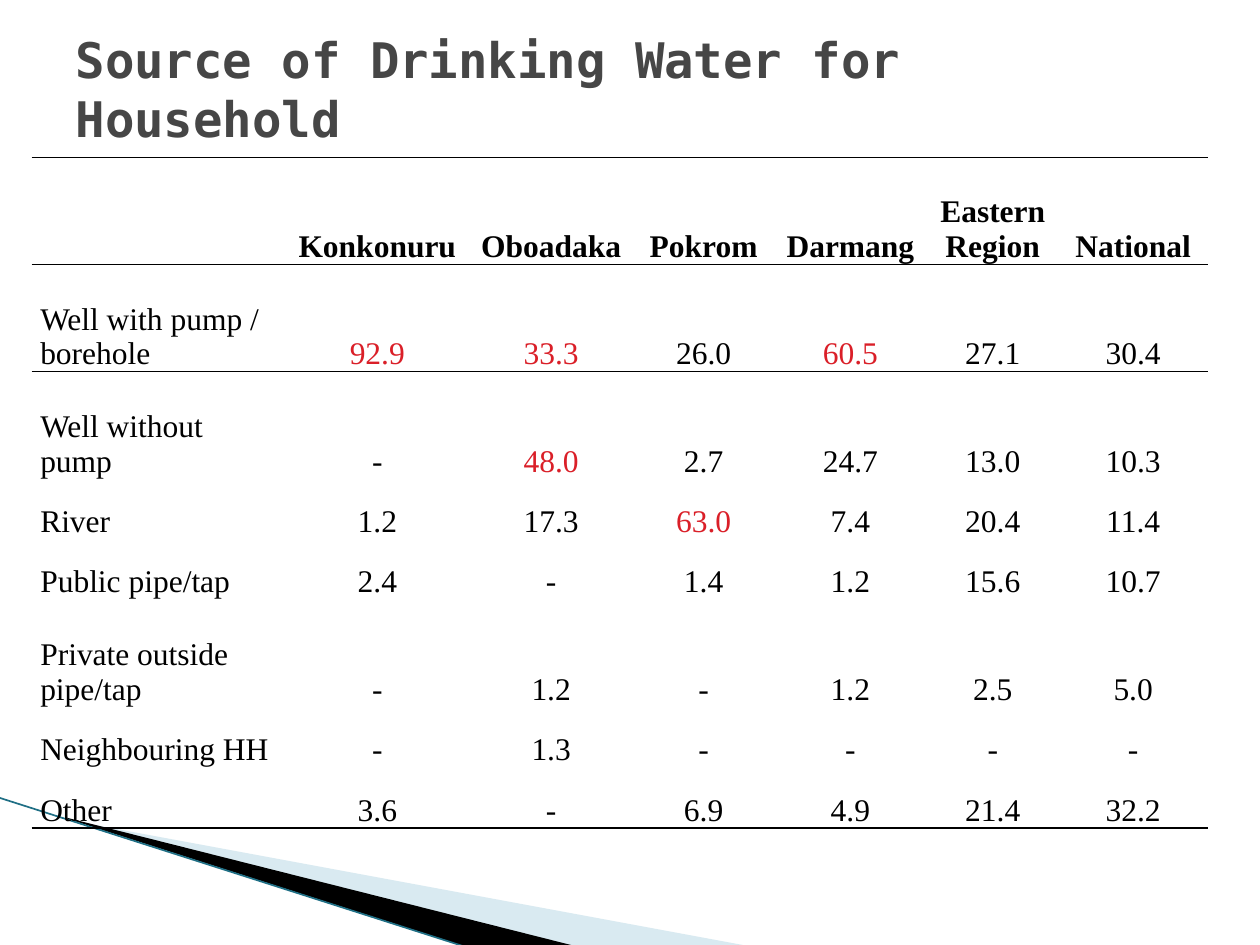
import pptx
import pptx.dml.color
import pptx.enum.shapes
import pptx.enum.text
import pptx.oxml
import pptx.oxml.ns
import pptx.util
from pptx.util import Inches

RGBColor = pptx.dml.color.RGBColor
BLACK = RGBColor(0x00, 0x00, 0x00)
RED = RGBColor(0xDA, 0x1F, 0x28)
TITLE_GRAY = RGBColor(0x46, 0x46, 0x46)
PALE_BLUE = RGBColor(0xA0, 0xCB, 0xDC)
TEAL = RGBColor(0x1F, 0x6F, 0x85)

PLAIN_TABLE_STYLE = "{2D5ABB26-0587-4C30-8999-92F81FD0307C}"
COLUMN_WIDTHS = [2.02, 1.45, 1.31, 1.11, 1.22, 1.04, 1.19]
ROW_HEIGHTS = [0.85, 0.85, 0.85, 0.48, 0.48, 0.85, 0.48, 0.48]
WATER_SOURCES = [
    ["", "Konkonuru", "Oboadaka", "Pokrom", "Darmang", "Eastern Region", "National"],
    ["Well with pump / borehole", "92.9", "33.3", "26.0", "60.5", "27.1", "30.4"],
    ["Well without pump", "-", "48.0", "2.7", "24.7", "13.0", "10.3"],
    ["River", "1.2", "17.3", "63.0", "7.4", "20.4", "11.4"],
    ["Public pipe/tap", "2.4", "-", "1.4", "1.2", "15.6", "10.7"],
    ["Private outside pipe/tap", "-", "1.2", "-", "1.2", "2.5", "5.0"],
    ["Neighbouring HH", "-", "1.3", "-", "-", "-", "-"],
    ["Other", "3.6", "-", "6.9", "4.9", "21.4", "32.2"],
]
HIGHLIGHTS = {(1, 1), (1, 2), (1, 4), (2, 2), (3, 3)}


def add_wedge(slide, left, top, offsets, color):
    """Draw a filled polygon from corner offsets relative to left and top."""
    points = [(Inches(left + x), Inches(top + y)) for x, y in offsets]
    builder = slide.shapes.build_freeform(*points[0], scale=1.0)
    builder.add_line_segments(points[1:], close=True)
    shape = builder.convert_to_shape()
    shape.shadow.inherit = False
    shape.fill.solid()
    shape.fill.fore_color.rgb = color
    shape.line.fill.background()
    return shape


def add_corner_decoration(slide, left, top):
    """Draw the two wedges and the thin line at the lower left."""
    pale = add_wedge(slide, left + 0.56, top + 0.17,
                     [(0, 0.01), (5.4, 1.01), (4.01, 1.01), (0, 0)], PALE_BLUE)
    color = pale.fill._xPr.find(".//" + pptx.oxml.ns.qn("a:srgbClr"))
    color.append(pptx.oxml.parse_xml(
        f'<a:alpha {pptx.oxml.ns.nsdecls("a")} val="40000"/>'))
    add_wedge(slide, left + 0.54, top + 0.16,
              [(0, 0), (4.04, 1.02), (3.19, 1.03), (0.01, 0.01)], BLACK)
    edge = slide.shapes.add_connector(
        pptx.enum.shapes.MSO_CONNECTOR.STRAIGHT, Inches(left), Inches(top),
        Inches(left + 3.72), Inches(top + 1.19))
    edge.line.color.rgb = TEAL
    edge.line.width = pptx.util.Pt(0.95)
    edge._element.spPr.append(pptx.oxml.parse_xml(
        f'<a:effectLst {pptx.oxml.ns.nsdecls("a")}/>'))


def place_title(slide, left, top, width, height):
    """Fill and format the title placeholder within its box."""
    title = slide.shapes.title
    title.left, title.top = Inches(left), Inches(top)
    title.width, title.height = Inches(width), Inches(height)
    frame = title.text_frame
    frame.text = "Source of Drinking Water for Household"
    frame.word_wrap = True
    frame.auto_size = pptx.enum.text.MSO_AUTO_SIZE.NONE
    frame.vertical_anchor = pptx.enum.text.MSO_ANCHOR.MIDDLE
    paragraph = frame.paragraphs[0]
    paragraph.alignment = pptx.enum.text.PP_ALIGN.LEFT
    paragraph.font.name = "DejaVu Sans Mono"
    paragraph.font.size = pptx.util.Pt(28)
    paragraph.font.bold = True
    paragraph.font.color.rgb = TITLE_GRAY


def set_borders(cell, sides):
    """Give a cell one-point black borders on the named sides."""
    properties = cell._tc.get_or_add_tcPr()
    for position, side in enumerate(sides):
        properties.insert(position, pptx.oxml.parse_xml(
            f'<a:ln{side} {pptx.oxml.ns.nsdecls("a")} w="12700"><a:solidFill>'
            f'<a:srgbClr val="{BLACK}"/></a:solidFill></a:ln{side}>'))


def format_cell(cell, row, column):
    """Set a cell's margins, fill, borders and text format by its place."""
    cell.margin_left = cell.margin_right = Inches(0.07)
    cell.margin_top = cell.margin_bottom = 0
    cell.vertical_anchor = pptx.enum.text.MSO_ANCHOR.BOTTOM
    cell.fill.background()
    last_row = len(WATER_SOURCES) - 1
    set_borders(cell, {0: "TB", 1: "T", last_row: "B"}.get(row, ""))
    paragraph = cell.text_frame.paragraphs[0]
    alignments = pptx.enum.text.PP_ALIGN
    paragraph.alignment = alignments.CENTER if column else alignments.LEFT
    paragraph.font.name = "Times New Roman"
    paragraph.font.size = pptx.util.Pt(18)
    paragraph.font.bold = row == 0
    paragraph.font.color.rgb = RED if (row, column) in HIGHLIGHTS else BLACK


def add_water_table(slide, left, top, width, height):
    """Build the table of water sources by community."""
    frame = slide.shapes.add_table(
        len(ROW_HEIGHTS), len(COLUMN_WIDTHS), Inches(left), Inches(top),
        Inches(width), Inches(height))
    table = frame.table
    table.horz_banding = False
    style = table._tbl.find(".//" + pptx.oxml.ns.qn("a:tableStyleId"))
    style.text = PLAIN_TABLE_STYLE
    for column, column_width in zip(table.columns, COLUMN_WIDTHS):
        column.width = Inches(column_width)
    for row, row_height in zip(table.rows, ROW_HEIGHTS):
        row.height = Inches(row_height)
    for row, values in enumerate(WATER_SOURCES):
        for column, value in enumerate(values):
            cell = table.cell(row, column)
            cell.text = value
            format_cell(cell, row, column)


def main():
    """Create the presentation and save it."""
    presentation = pptx.Presentation()
    presentation.slide_width = Inches(10)
    presentation.slide_height = Inches(7.5)
    slide = presentation.slides.add_slide(presentation.slide_layouts[5])
    add_corner_decoration(slide, -0.01, 6.33)
    place_title(slide, 0.5, 0.08, 9, 1.25)
    add_water_table(slide, 0.25, 1.25, 9.33, 5.33)
    presentation.save("out.pptx")


if __name__ == "__main__":
    main()
